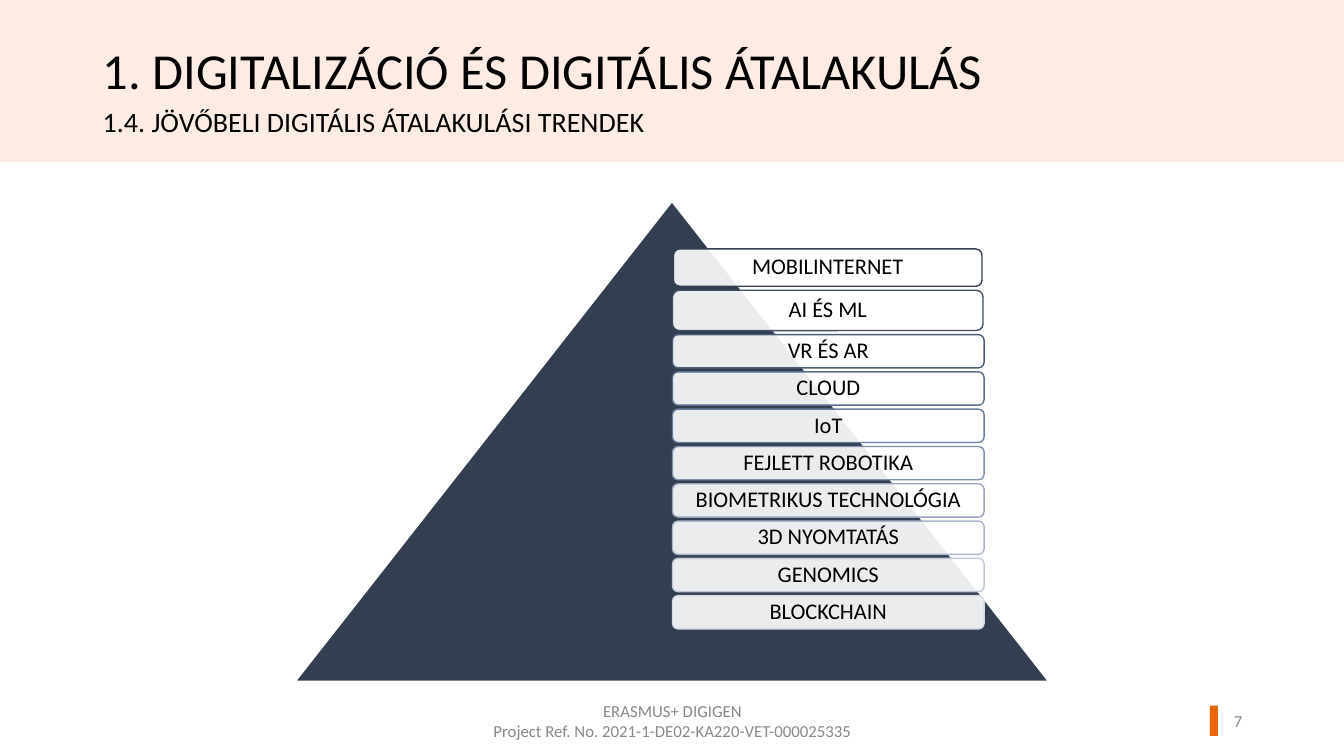
from lxml.etree import SubElement
from pptx import Presentation
from pptx.dml.color import RGBColor
from pptx.enum.shapes import MSO_SHAPE as SHAPE
from pptx.enum.text import MSO_ANCHOR as ANCHOR, PP_ALIGN as ALIGN
from pptx.oxml.ns import qn
from pptx.util import Pt

PX = 9144
FONT = "Calibri"
BLACK = RGBColor(0x00, 0x00, 0x00)
WHITE = RGBColor(0xFF, 0xFF, 0xFF)
GREY = RGBColor(0x88, 0x88, 0x88)
PEACH = RGBColor(0xFD, 0xEC, 0xE3)
ORANGE = RGBColor(0xE8, 0x65, 0x07)
NAVY = RGBColor(0x33, 0x3F, 0x50)

TITLE = "1. DIGITALIZÁCIÓ ÉS DIGITÁLIS ÁTALAKULÁS"
SUBTITLE = "1.4. JÖVŐBELI DIGITÁLIS ÁTALAKULÁSI TRENDEK"
FOOTER = "ERASMUS+ DIGIGEN\nProject Ref. No. 2021-1-DE02-KA220-VET-000025335"
PAGE = "7"

TRENDS = [
    ("MOBILINTERNET", 306, 37, NAVY),
    ("AI ÉS ML", 308, 40, RGBColor(0x3F, 0x4D, 0x65)),
    ("VR ÉS AR", 309, 33, RGBColor(0x4C, 0x5D, 0x7A)),
    ("CLOUD", 309, 33, RGBColor(0x59, 0x6D, 0x8F)),
    ("IoT", 309, 33, RGBColor(0x6A, 0x7E, 0xA2)),
    ("FEJLETT ROBOTIKA", 309, 33, RGBColor(0x7F, 0x91, 0xAF)),
    ("BIOMETRIKUS TECHNOLÓGIA", 309, 33, RGBColor(0x95, 0xA3, 0xBC)),
    ("3D NYOMTATÁS", 309, 33, RGBColor(0xAA, 0xB6, 0xCA)),
    ("GENOMICS", 309, 33, RGBColor(0xBF, 0xC8, 0xD7)),
    ("BLOCKCHAIN", 309, 33, RGBColor(0xD5, 0xDA, 0xE4)),
]
TRENDS_TOP, TRENDS_CENTER, TRENDS_GAP = 247, 821, 4


def emu(*lengths):
    return [v * PX for v in lengths]


def add_shape(s, kind, box, fill, line=None):
    sp = s.shapes.add_shape(kind, *emu(*box))
    sp.shadow.inherit = False
    sp.fill.solid()
    sp.fill.fore_color.rgb = fill
    if line is None:
        sp.line.fill.background()
    else:
        sp.line.color.rgb = line
        sp.line.width = Pt(1)
    return sp


def set_text(sp, text, size, color=BLACK, align=ALIGN.LEFT, anchor=ANCHOR.TOP,
             spacing=0.9, insets=(10, 5)):
    tf = sp.text_frame
    tf.text = text
    tf.word_wrap = True
    tf.vertical_anchor = anchor
    tf.margin_left = tf.margin_right = insets[0] * PX
    tf.margin_top = tf.margin_bottom = insets[1] * PX
    for p in tf.paragraphs:
        p.alignment = align
        p.line_spacing = spacing
        for r in p.runs:
            r.font.name = FONT
            r.font.size = Pt(size)
            r.font.color.rgb = color


def add_trends(s):
    top = TRENDS_TOP
    for label, width, height, line in TRENDS:
        box = (TRENDS_CENTER - width // 2, top, width, height)
        sp = add_shape(s, SHAPE.ROUNDED_RECTANGLE, box, WHITE, line)
        clr = sp.element.spPr.find(qn("a:solidFill")).find(qn("a:srgbClr"))
        SubElement(clr, qn("a:alpha"), val="90000")
        set_text(sp, label, 16, align=ALIGN.CENTER, anchor=ANCHOR.MIDDLE, insets=(7, 7))
        top += height + TRENDS_GAP


def main():
    prs = Presentation()
    prs.slide_width, prs.slide_height = emu(1333, 750)
    s = prs.slides.add_slide(prs.slide_layouts[5])

    add_shape(s, SHAPE.RECTANGLE, (0, 0, 1333, 161), PEACH)
    add_shape(s, SHAPE.RECTANGLE, (1200, 700, 8, 30), ORANGE)
    add_shape(s, SHAPE.ISOSCELES_TRIANGLE, (293, 200, 747, 476), NAVY, WHITE)
    add_trends(s)

    for text, box, align in [
        (FOOTER, (442, 695, 450, 40), ALIGN.CENTER),
        (PAGE, (1177, 695, 65, 40), ALIGN.RIGHT),
    ]:
        sp = s.shapes.add_textbox(*emu(*box))
        set_text(sp, text, 12, GREY, align, ANCHOR.MIDDLE, spacing=1.0)

    title = s.shapes.title
    title.left, title.top, title.width, title.height = emu(92, 41, 1040, 85)
    set_text(title, TITLE, 36)
    title.element.getparent().append(title.element)

    sp = s.shapes.add_textbox(*emu(92, 103, 1085, 85))
    set_text(sp, SUBTITLE, 20)

    prs.save("out.pptx")


if __name__ == "__main__":
    main()
